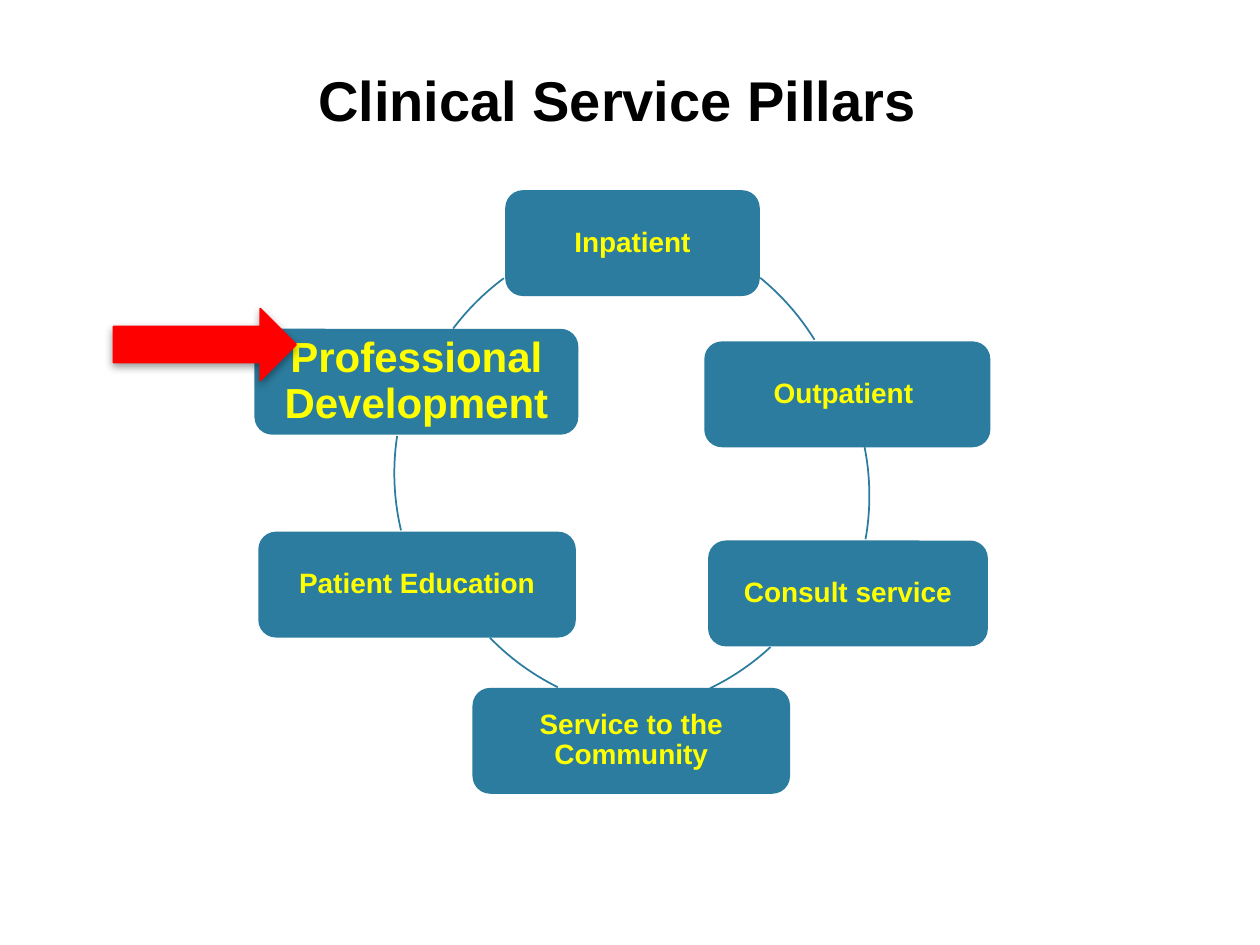
import math
from dataclasses import dataclass

import lxml.etree
import pptx
import pptx.dml.color
import pptx.enum.shapes
import pptx.enum.text
import pptx.oxml.ns
import pptx.util
from pptx.util import Inches


@dataclass(frozen=True)
class Theme:
    font: str = "Arial"
    title_color: str = "000000"
    pillar_fill: str = "2C7C9F"
    pillar_text: str = "FFFF00"
    arrow_color: str = "FF0000"
    title_size: int = 32
    pillar_size: int = 16
    focus_size: int = 24
    line_width: int = 1


@dataclass(frozen=True)
class Pillar:
    label: str
    left: float
    top: float
    width: float
    size: int
    inset: float = 0.11


@dataclass(frozen=True)
class Link:
    left: float
    top: float
    start: tuple[float, float]
    end: tuple[float, float]


THEME = Theme()
PILLAR_HEIGHT = 0.84
RING_DIAMETER = 3.95

PILLARS = [
    Pillar("Inpatient", 4.01, 1.51, 2.02, THEME.pillar_size),
    Pillar("Outpatient ", 5.59, 2.71, 2.27, THEME.pillar_size),
    Pillar("Consult service", 5.62, 4.29, 2.22, THEME.pillar_size),
    Pillar("Service to the Community", 3.75, 5.46, 2.52, THEME.pillar_size),
    Pillar("Patient Education", 2.05, 4.22, 2.52, THEME.pillar_size),
    Pillar("Professional Development", 2.02, 2.61, 2.57, THEME.focus_size, 0.14),
]

LINKS = [
    Link(2.81, 1.76, (6.03, 2.21), (6.46, 2.7)),
    Link(2.95, 1.96, (6.86, 3.55), (6.87, 4.28)),
    Link(2.8, 1.71, (6.11, 5.13), (5.63, 5.45)),
    Link(3.33, 1.71, (4.43, 5.45), (3.89, 5.06)),
    Link(3.13, 1.78, (3.18, 4.21), (3.15, 3.46)),
    Link(3.2, 1.82, (3.6, 2.61), (4, 2.21)),
]


def rgb(color: str) -> pptx.dml.color.RGBColor:
    return pptx.dml.color.RGBColor.from_string(color)


def write_text(shape, text: str, size: int, color: str, anchor) -> None:
    frame = shape.text_frame
    frame.word_wrap = True
    frame.vertical_anchor = anchor
    frame.text = text
    paragraph = frame.paragraphs[0]
    paragraph.alignment = pptx.enum.text.PP_ALIGN.CENTER
    for run in paragraph.runs:
        run.font.name = THEME.font
        run.font.size = pptx.util.Pt(size)
        run.font.bold = True
        run.font.color.rgb = rgb(color)


def add_title(slide, text: str) -> None:
    box = slide.shapes.add_textbox(Inches(0.5), Inches(0.14), Inches(8.8), Inches(0.96))
    anchor = pptx.enum.text.MSO_ANCHOR.BOTTOM
    write_text(box, text, THEME.title_size, THEME.title_color, anchor)


def add_pillar(slide, pillar: Pillar) -> None:
    shape = slide.shapes.add_shape(
        pptx.enum.shapes.MSO_SHAPE.ROUNDED_RECTANGLE,
        Inches(pillar.left), Inches(pillar.top),
        Inches(pillar.width), Inches(PILLAR_HEIGHT),
    )
    shape.shadow.inherit = False
    shape.fill.solid()
    shape.fill.fore_color.rgb = rgb(THEME.pillar_fill)
    shape.line.fill.background()
    anchor = pptx.enum.text.MSO_ANCHOR.MIDDLE
    write_text(shape, pillar.label, pillar.size, THEME.pillar_text, anchor)
    frame = shape.text_frame
    frame.margin_left = frame.margin_right = Inches(pillar.inset)
    frame.margin_top = frame.margin_bottom = Inches(pillar.inset)
    frame.paragraphs[0].line_spacing = 0.9


def add_link(slide, link: Link) -> None:
    shape = slide.shapes.add_shape(
        pptx.enum.shapes.MSO_SHAPE.ARC,
        Inches(link.left), Inches(link.top),
        Inches(RING_DIAMETER), Inches(RING_DIAMETER),
    )
    shape.shadow.inherit = False
    shape.fill.background()
    shape.line.color.rgb = rgb(THEME.pillar_fill)
    shape.line.width = pptx.util.Pt(THEME.line_width)
    radius = RING_DIAMETER / 2
    for index, (x, y) in enumerate((link.start, link.end)):
        angle = math.atan2(y - link.top - radius, x - link.left - radius)
        shape.adjustments[index] = math.degrees(angle) % 360 * 0.6


def add_focus_arrow(slide) -> None:
    shape = slide.shapes.add_shape(
        pptx.enum.shapes.MSO_SHAPE.RIGHT_ARROW,
        Inches(0.9), Inches(2.45), Inches(1.45), Inches(0.57),
    )
    shape.fill.solid()
    shape.fill.fore_color.rgb = rgb(THEME.arrow_color)
    shape.line.color.rgb = rgb(THEME.arrow_color)
    shape.line.width = pptx.util.Pt(THEME.line_width)
    shape.shadow.inherit = False
    qualified = pptx.oxml.ns.qn
    effects = shape.element.spPr.find(qualified("a:effectLst"))
    shadow = lxml.etree.SubElement(
        effects, qualified("a:outerShdw"),
        blurRad=str(pptx.util.Pt(5)), dist=str(pptx.util.Pt(2)),
        dir="5400000", rotWithShape="0",
    )
    color = lxml.etree.SubElement(shadow, qualified("a:srgbClr"), val="000000")
    lxml.etree.SubElement(color, qualified("a:alpha"), val="40000")


def main() -> None:
    presentation = pptx.Presentation()
    presentation.slide_width = Inches(10)
    presentation.slide_height = Inches(7.5)
    slide = presentation.slides.add_slide(presentation.slide_layouts[6])
    add_title(slide, "Clinical Service Pillars")
    for pillar, link in zip(PILLARS, LINKS):
        add_pillar(slide, pillar)
        add_link(slide, link)
    add_focus_arrow(slide)
    presentation.save("out.pptx")


if __name__ == "__main__":
    main()
